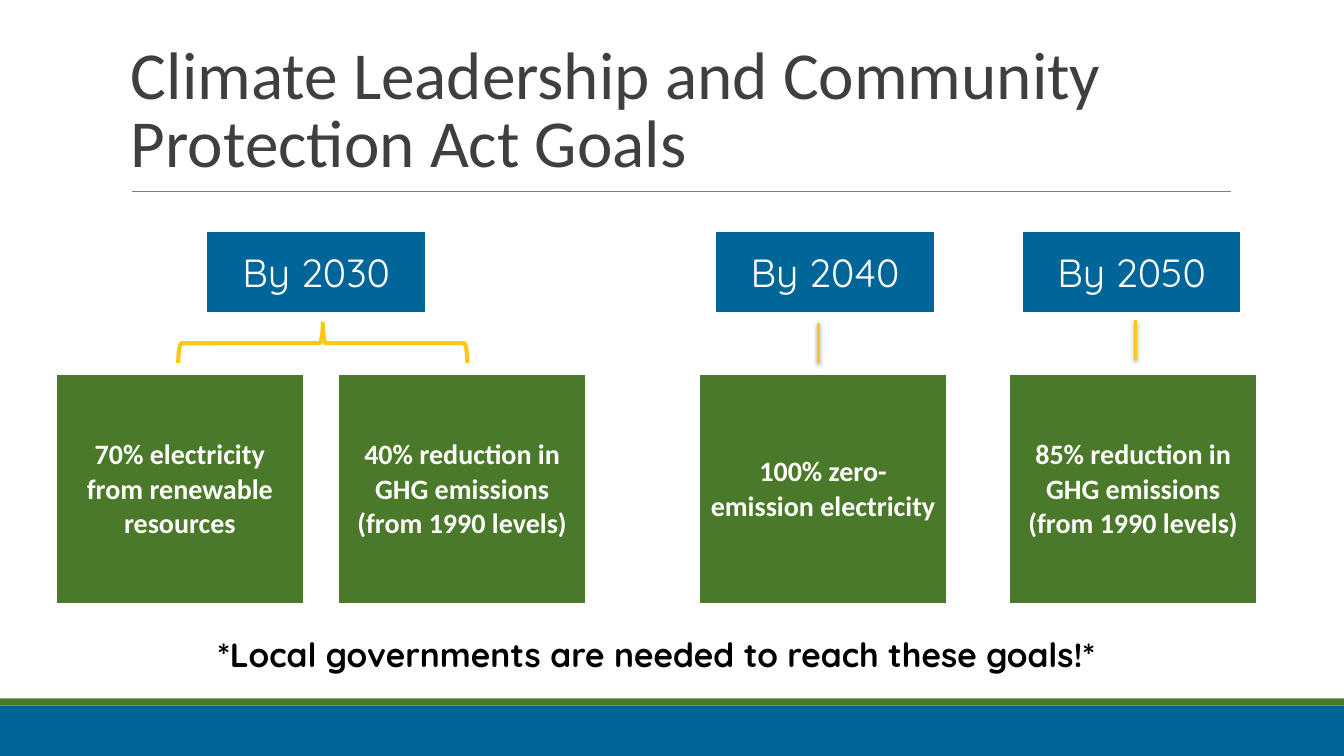
from dataclasses import dataclass

import lxml.etree
import pptx
import pptx.dml.color
import pptx.enum.shapes
import pptx.enum.text
import pptx.oxml
import pptx.oxml.ns
import pptx.util

COLUMNS, ROWS = 160, 90
UNIT = pptx.util.Inches(13.333) / COLUMNS
SHAPES = pptx.enum.shapes.MSO_SHAPE
ALIGN = pptx.enum.text.PP_ALIGN
ANCHOR = pptx.enum.text.MSO_ANCHOR


@dataclass(frozen=True)
class Theme:
    blue: str = "006699"
    green: str = "4A792A"
    gold: str = "FFC61A"
    white: str = "FFFFFF"
    black: str = "000000"
    heading: str = "3F3F3F"
    rule: str = "7F7F7F"
    body_font: str = "Calibri"
    accent_font: str = "Quicksand"
    title_size: int = 48
    year_size: int = 28
    goal_size: int = 20
    caption_size: int = 24


@dataclass(frozen=True)
class Box:
    left: float
    top: float
    width: float
    height: float

    def emu(self):
        return [grid(n) for n in (self.left, self.top, self.width, self.height)]


THEME = Theme()
GOAL_WIDTH, GOAL_HEIGHT = 29.4, 27.36
YEAR_WIDTH, YEAR_HEIGHT = 26.04, 9.72
GOAL_DROP = 17
MARKER_HEIGHT = 4.7


def grid(count):
    return round(count * UNIT)


def rgb(color):
    return pptx.dml.color.RGBColor.from_string(color)


def write(frame, text, font, size, color, bold=False, align=ALIGN.CENTER):
    paragraph = frame.paragraphs[0]
    paragraph.alignment = align
    run = paragraph.add_run()
    run.text = text
    run.font.name = font
    run.font.size = pptx.util.Pt(size)
    run.font.bold = bold
    run.font.color.rgb = rgb(color)
    return paragraph


def add_line(slide, start, end, color, weight, shadow=False):
    line = slide.shapes.add_connector(
        pptx.enum.shapes.MSO_CONNECTOR.STRAIGHT,
        *(grid(n) for n in (*start, *end)))
    line.line.color.rgb = rgb(color)
    line.line.width = pptx.util.Pt(weight)
    properties = line.line._ln.getparent()
    effects = lxml.etree.SubElement(properties, pptx.oxml.ns.qn("a:effectLst"))
    if shadow:
        effects.append(pptx.oxml.parse_xml(
            f'<a:outerShdw {pptx.oxml.ns.nsdecls("a")} blurRad="39370" dist="20320" '
            f'dir="5400000" rotWithShape="0"><a:srgbClr val="{THEME.black}">'
            '<a:alpha val="38000"/></a:srgbClr></a:outerShdw>'))


def add_card(slide, box, text, fill, font, size, bold):
    table = slide.shapes.add_table(1, 1, *box.emu()).table
    table.first_row = False
    table.horz_banding = False
    cell = table.cell(0, 0)
    properties = cell._tc.get_or_add_tcPr()
    for side, weight in (("L", 1), ("R", 1), ("T", 1), ("B", 3)):
        properties.append(pptx.oxml.parse_xml(
            f'<a:ln{side} {pptx.oxml.ns.nsdecls("a")} w="{pptx.util.Pt(weight)}">'
            f'<a:solidFill><a:srgbClr val="{THEME.white}"/></a:solidFill></a:ln{side}>'))
    cell.fill.solid()
    cell.fill.fore_color.rgb = rgb(fill)
    cell.vertical_anchor = ANCHOR.MIDDLE
    cell.margin_left = cell.margin_right = pptx.util.Inches(0.11)
    cell.margin_top = cell.margin_bottom = pptx.util.Inches(0.06)
    write(cell.text_frame, text, font, size, THEME.white, bold)


def add_brace(slide, box):
    middle_x = box.left + box.width / 2
    middle_y = box.top + box.height / 2
    upright = Box(middle_x - box.height / 2, middle_y - box.width / 2, box.height, box.width)
    brace = slide.shapes.add_shape(SHAPES.LEFT_BRACE, *upright.emu())
    brace.rotation = 90
    brace.shadow.inherit = False
    brace.fill.background()
    brace.line.color.rgb = rgb(THEME.gold)
    brace.line.width = pptx.util.Pt(3)


def footer_bands(slide, box):
    stripe = 0.84
    bands = ((Box(box.left, box.top + stripe, box.width, box.height - stripe), THEME.blue),
             (Box(box.left, box.top, box.width, stripe), THEME.green))
    for band_box, color in bands:
        band = slide.shapes.add_shape(SHAPES.RECTANGLE, *band_box.emu())
        band.shadow.inherit = False
        band.fill.solid()
        band.fill.fore_color.rgb = rgb(color)
        band.line.fill.background()


def title_area(slide, box, text):
    bottom = box.top + box.height
    add_line(slide, (box.left + 1.3, bottom), (box.left + box.width + 0.1, bottom),
             THEME.rule, 0.75)
    frame = slide.shapes.add_textbox(*box.emu()).text_frame
    frame.word_wrap = True
    frame.vertical_anchor = ANCHOR.BOTTOM
    frame.margin_top = frame.margin_bottom = pptx.util.Inches(0.1)
    title = write(frame, text, THEME.body_font, THEME.title_size, THEME.heading,
                  align=ALIGN.LEFT)
    title.line_spacing = 0.85


def goal_group(slide, box, year, goals, year_inset, marker_inset, marker_drop):
    add_card(slide, Box(box.left + year_inset, box.top, YEAR_WIDTH, YEAR_HEIGHT), year,
             THEME.blue, THEME.accent_font, THEME.year_size, False)
    gap = (box.width - len(goals) * GOAL_WIDTH) / max(len(goals) - 1, 1)
    for index, goal in enumerate(goals):
        left = box.left + index * (GOAL_WIDTH + gap)
        add_card(slide, Box(left, box.top + GOAL_DROP, GOAL_WIDTH, GOAL_HEIGHT), goal,
                 THEME.green, THEME.body_font, THEME.goal_size, True)
    marker_left, marker_top = box.left + marker_inset, box.top + marker_drop
    if len(goals) > 1:
        span = box.width - GOAL_WIDTH + 0.8
        add_brace(slide, Box(marker_left, marker_top, span, MARKER_HEIGHT))
    else:
        add_line(slide, (marker_left, marker_top),
                 (marker_left, marker_top + MARKER_HEIGHT), THEME.gold, 2, shadow=True)


def caption(slide, box, text):
    frame = slide.shapes.add_textbox(*box.emu()).text_frame
    frame.word_wrap = True
    write(frame, text, THEME.accent_font, THEME.caption_size, THEME.black, bold=True)


def goals_slide(deck):
    slide = deck.slides.add_slide(deck.slide_layouts[6])
    footer_bands(slide, Box(0, 83.16, COLUMNS, ROWS - 83.16))
    title_area(slide, Box(14.4, 3.7, 132, 19.1),
               "Climate Leadership and Community Protection Act Goals")
    top, height = 27.6, GOAL_DROP + GOAL_HEIGHT
    goal_group(slide, Box(6.72, top, 63, height), "By 2030",
               ["70% electricity from renewable resources",
                "40% reduction in GHG emissions (from 1990 levels)"], 17.9, 14.5, 10.9)
    goal_group(slide, Box(83.3, top, GOAL_WIDTH, height), "By 2040",
               ["100% zero-emission electricity"], 1.9, 14.15, 10.9)
    goal_group(slide, Box(120.2, top, GOAL_WIDTH, height), "By 2050",
               ["85% reduction in GHG emissions (from 1990 levels)"], 1.5, 15, 10.55)
    caption(slide, Box(6.72, 74.9, 142.8, 6),
            "*Local governments are needed to reach these goals!*")


def main():
    deck = pptx.Presentation()
    deck.slide_width = grid(COLUMNS)
    deck.slide_height = grid(ROWS)
    goals_slide(deck)
    deck.save("out.pptx")


if __name__ == "__main__":
    main()
